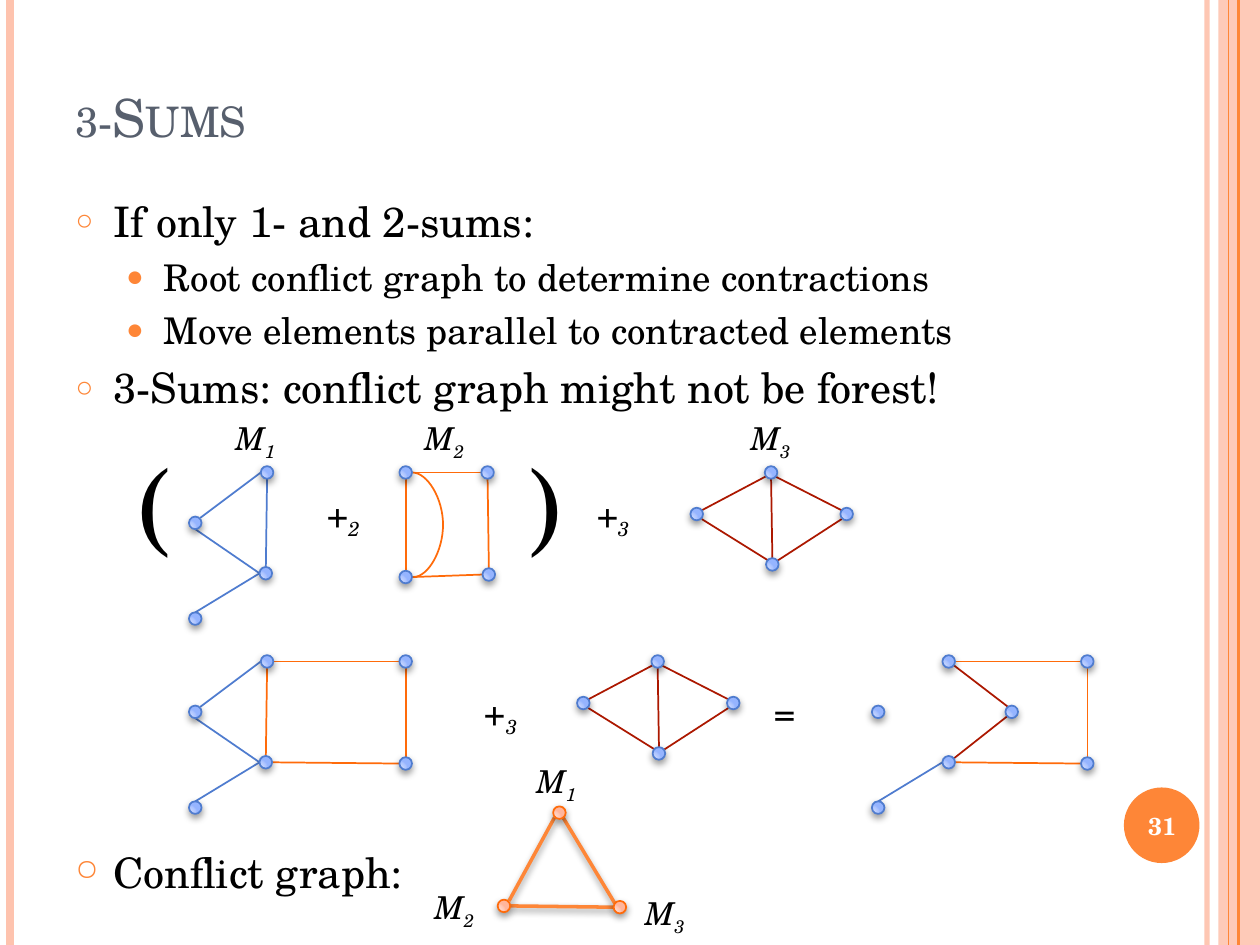
"""Build the 3-Sums slide with its graphs and conflict triangle."""
from pptx import Presentation
from pptx.dml.color import RGBColor
from pptx.enum.shapes import MSO_CONNECTOR, MSO_SHAPE
from pptx.enum.text import MSO_ANCHOR, MSO_AUTO_SIZE, PP_ALIGN
from pptx.oxml import parse_xml
from pptx.oxml.ns import nsdecls, qn
from pptx.util import Inches, Pt

LINE, CURVE = MSO_CONNECTOR.STRAIGHT, MSO_CONNECTOR.CURVE
OVAL, RECT = MSO_SHAPE.OVAL, MSO_SHAPE.RECTANGLE
MIDDLE, FIXED = MSO_ANCHOR.MIDDLE, MSO_AUTO_SIZE.NONE
LEFT, CENTER = PP_ALIGN.LEFT, PP_ALIGN.CENTER
FONT = "TeX Gyre Schola"
BLACK = RGBColor(0x00, 0x00, 0x00)
WHITE = RGBColor(0xFF, 0xFF, 0xFF)
SLATE = RGBColor(0x57, 0x5F, 0x6D)
PEACH = RGBColor(0xFE, 0xC3, 0xAE)
AMBER = RGBColor(0xFE, 0x86, 0x37)
ORANGE = RGBColor(0xFF, 0x6B, 0x0A)
BLUE = RGBColor(0x4F, 0x7C, 0xCF)
RED = RGBColor(0xAC, 0x18, 0x00)
SHADES = {
    BLUE: ("CFDCFF", "CBD9FF", "AFC6FF", "95B4FF"),
    ORANGE: ("FFDED5", "FFDBD0", "FFC8B6", "FFB59B"),
}
SHADOW = ('<a:outerShdw blurRad="50800" dist="25400" dir="5400000" rotWithShape="0">'
          '<a:srgbClr val="000000"><a:alpha val="40000"/></a:srgbClr></a:outerShdw>')

prs = Presentation()
prs.slide_width, prs.slide_height = Inches(10), Inches(7.5)
slide = prs.slides.add_slide(prs.slide_layouts[1])
shapes = slide.shapes


def put(parent, xml):
    root = parse_xml(f"<a:x {nsdecls('a')}>{xml}</a:x>")
    parent.extend(list(root))


def label(x, y, w, h, text, sub="", size=18, wrap=False):
    frame = shapes.add_textbox(Inches(x), Inches(y), Inches(w), Inches(h)).text_frame
    frame.word_wrap = wrap
    par = frame.paragraphs[0]
    par.add_run().text = text
    if sub:
        run = par.add_run()
        run.text = sub
        run._r.get_or_add_rPr().set("baseline", "-25000")
    par.font.name, par.font.size = FONT, Pt(size)
    par.font.italic = not wrap
    par.font.color.rgb = BLACK
    return par


band = shapes.add_shape(RECT, Inches(9.67), 0, Inches(0.33), Inches(7.5))
band.fill.solid()
band.fill.fore_color.rgb = PEACH
put(band._element.spPr.find(".//" + qn("a:srgbClr")), '<a:alpha val="87000"/>')
disc = shapes.add_shape(OVAL, Inches(8.92), Inches(6.25), Inches(0.6), Inches(0.6))
disc.fill.solid()
disc.fill.fore_color.rgb = AMBER
for shape in (band, disc):
    shape.line.fill.background()
    shape.shadow.inherit = False

title = shapes.title
title.left, title.top, title.width, title.height = map(Inches, (0.5, 0.3, 8.17, 1.25))
title.text_frame.text = "3-Sums"
title.text_frame.vertical_anchor = MIDDLE
title.text_frame.auto_size = FIXED
head = title.text_frame.paragraphs[0]
head.alignment = LEFT
head.font.name, head.font.size = FONT, Pt(30)
head.font.color.rgb = SLATE
head.runs[0]._r.get_or_add_rPr().set("cap", "small")

body = shapes.placeholders[1]
body.left, body.top, body.width, body.height = map(Inches, (0.5, 1.5, 8.17, 2.08))
foot = shapes.add_textbox(Inches(0.5), Inches(6.67), Inches(8.17), Inches(0.58))
lists = (
    (body, ((0, "If only 1- and 2-sums:"),
            (1, "Root conflict graph to determine contractions"),
            (1, "Move elements parallel to contracted elements"),
            (0, "3-Sums: conflict graph might not be forest!"))),
    (foot, ((0, "Conflict graph:"),)),
)
for box, items in lists:
    frame = box.text_frame
    frame.word_wrap, frame.auto_size = True, FIXED
    frame.text = "\n".join(text for _, text in items)
    for par, (level, _) in zip(frame.paragraphs, items):
        par.level = level
        props = par._p.get_or_add_pPr()
        props.set("marL", str(Inches((0.3, 0.7)[level])))
        props.set("indent", str(Inches(-0.3)))
        put(props, f'<a:buClr><a:srgbClr val="{AMBER}"/></a:buClr>'
                   f'<a:buSzPct val="{(70000, 80000)[level]}"/>'
                   f'<a:buChar char="{"○●"[level]}"/>')
        par.space_before = Pt((6, 5)[level])
        par.font.name, par.font.size = FONT, Pt((24, 21)[level])
        par.font.color.rgb = BLACK

FAN = ((1.5, 4.1), (2.06, 4.5), (2.07, 3.7), (1.5, 4.86))
KITE = ((5.48, 4.03), (6.07, 3.7), (6.08, 4.43), (6.67, 4.03))
SIDE = ((3.17, 5.2), (3.17, 6.01))
spots = [(x, y, BLUE) for x, y in (
    (3.17, 3.7), (3.17, 4.53), (3.82, 3.7), (3.83, 4.51),
    (6.92, 5.6), (7.48, 6), (7.48, 5.2), (6.92, 6.36), (7.98, 5.6))]
spots += [(x, y, ORANGE) for x, y in ((3.95, 7.14), (4.87, 7.15), (4.39, 6.4))]

FANRAYS = ((1.59, 4.11, 2.07, 3.75), (1.55, 4.2, 2.06, 4.55), (2.06, 4.55, 1.55, 4.86))
KITERAYS = ((6.08, 3.78, 5.57, 4.05), (6.12, 3.8, 6.13, 4.43), (5.57, 4.12, 6.1, 4.45),
            (6.15, 3.78, 6.68, 4.05), (6.17, 4.45, 6.68, 4.12))
SIDERAYS = ((3.17, 6.06, 2.16, 6.05), (3.17, 5.25, 2.17, 5.25), (3.22, 6.02, 3.22, 5.3))
edges = [(x, 0, x, 7.5, tint, wide) for x, tint, wide in (
    (9.58, PEACH, 3), (0.08, PEACH, 4.5), (9.83, AMBER, 1.5), (9.75, AMBER, 0.75))]
edges += [
    (2.12, 3.8, 2.11, 4.5, BLUE, 1),
    (2.12, 5.3, 2.11, 6, ORANGE, 1),
    (3.22, 3.8, 3.22, 4.53, ORANGE, 1),
    (3.83, 4.56, 3.27, 4.58, ORANGE, 1),
    (3.82, 3.75, 3.27, 3.75, ORANGE, 1),
    (3.88, 4.51, 3.87, 3.8, ORANGE, 1),
    (7.48, 6.05, 6.97, 6.36, BLUE, 1),
    (7.57, 5.28, 8, 5.61, RED, 1),
    (7.57, 6.02, 8, 5.68, RED, 1),
    (4.04, 7.15, 4.4, 6.49, AMBER, 2),
    (4.05, 7.19, 4.87, 7.2, AMBER, 2),
    (4.47, 6.49, 4.88, 7.17, AMBER, 2),
]
for dots, rays, tint, shifts in (
        (FAN, FANRAYS, BLUE, ((0, 0), (0, 1.5))),
        (KITE, KITERAYS, RED, ((0, 0), (-0.9, 1.5))),
        (SIDE, SIDERAYS, ORANGE, ((0, 0), (5.41, 0)))):
    for dx, dy in shifts:
        spots += [(x + dx, y + dy, BLUE) for x, y in dots]
        edges += [(a + dx, b + dy, c + dx, d + dy, tint, 1) for a, b, c, d in rays]
edges.append((3.27, 3.75, 3.28, 4.58, ORANGE, 1))

links = []
for *ends, tint, wide in edges:
    kind = CURVE if edges[-1][:4] == tuple(ends) else LINE
    link = shapes.add_connector(kind, *map(Inches, ends))
    link.line.color.rgb, link.line.width = tint, Pt(wide)
    put(link._element.spPr, f"<a:effectLst>{SHADOW if wide == 2 else ''}</a:effectLst>")
    links.append(link)
put(links[0]._element.spPr.find(".//" + qn("a:srgbClr")), '<a:alpha val="93000"/>')
bend = links[-1]._element.spPr.find(".//" + qn("a:avLst"))
put(bend, '<a:gd name="adj1" fmla="val 2500000"/>')

for x, y, tint in spots:
    node = shapes.add_shape(OVAL, Inches(x), Inches(y), Inches(0.1), Inches(0.1))
    stops = "".join(f'<a:gs pos="{pos}000"><a:srgbClr val="{shade}"/></a:gs>'
                    for pos, shade in zip((0, 30, 75, 100), SHADES[tint]))
    props = node._element.spPr
    put(props, f'<a:gradFill><a:gsLst>{stops}</a:gsLst><a:path path="circle">'
               '<a:fillToRect l="5000" t="100000" r="120000" b="10000"/></a:path></a:gradFill>')
    node.line.color.rgb, node.line.width = tint, Pt(1)
    node.shadow.inherit = False
    put(props.find(qn("a:effectLst")), SHADOW)

for x, y, sub in ((1.77, 3.28, "1"), (3.27, 3.28, "2"), (5.86, 3.28, "3"),
                  (4.16, 6, "1"), (3.35, 7, "2"), (5.02, 7.05, "3")):
    label(x, y, 0.56, 0.4, "M", sub)
for x, y, sign, sub in ((2.5, 3.86, "+", "2"), (4.64, 3.86, "+", "3"),
                        (3.75, 5.43, "+", "3"), (6.05, 5.43, "=", "")):
    label(x, y, 0.53 if sub else 0.43, 0.44, sign, sub, 20)
for x, sign in ((1, "("), (4.08, ")")):
    label(x, 3.45, 0.67, 1.11, sign, size=60, wrap=True)
page = label(8.89, 6.27, 0.67, 0.57, "31", size=14, wrap=True)
page.alignment, page.font.bold = CENTER, True
page.font.color.rgb = WHITE
shapes[-1].text_frame.vertical_anchor = MIDDLE

prs.save("out.pptx")
